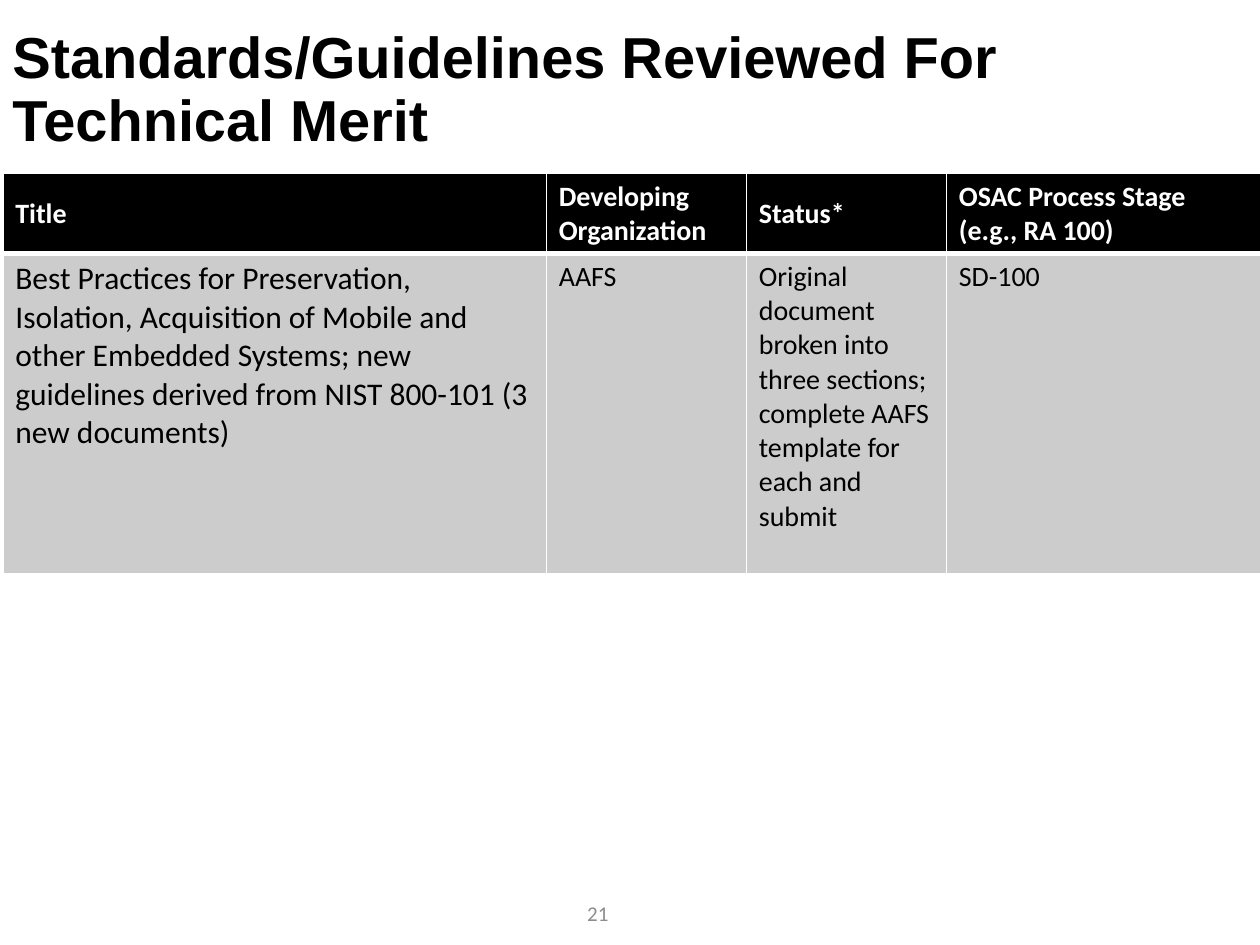
from pptx import Presentation
from pptx.dml.color import RGBColor
from pptx.enum.text import MSO_ANCHOR as Anchor, PP_ALIGN as Align
from pptx.oxml.ns import qn
from pptx.util import Pt
from lxml.etree import SubElement

BLACK = RGBColor(0x00, 0x00, 0x00)
WHITE = RGBColor(0xFF, 0xFF, 0xFF)
BODY_GRAY = RGBColor(0xCC, 0xCC, 0xCC)
NUMBER_GRAY = RGBColor(0x8C, 0x8C, 0x8C)

COLUMN_WIDTHS = [310.6, 114.3, 114.3, 179.4]
ROW_HEIGHTS = [45.6, 183]
HEADERS = ["Title", "Developing Organization", "Status*",
           "OSAC Process Stage (e.g., RA 100)"]
BODY = [
    "Best Practices for Preservation, Isolation, Acquisition of Mobile and "
    "other Embedded Systems; new guidelines derived from NIST 800-101 "
    "(3 new documents)",
    "AAFS",
    "Original document broken into three sections; complete AAFS template "
    "for each and submit",
    "SD-100",
]


def write_text(frame, text, color, alignment=Align.LEFT, line_spacing=1.0, **font_format):
    paragraph = frame.paragraphs[0]
    paragraph.alignment = alignment
    paragraph.line_spacing = line_spacing
    run = paragraph.add_run()
    run.text = text
    for name, value in font_format.items():
        setattr(run.font, name, value)
    run.font.color.rgb = color


def add_text(slide, box, text, color, **text_format):
    shape = slide.shapes.add_textbox(*map(Pt, box))
    frame = shape.text_frame
    frame.word_wrap = True
    frame.vertical_anchor = Anchor.MIDDLE
    write_text(frame, text, color, **text_format)


def set_borders(cell, widths):
    properties = cell._tc.get_or_add_tcPr()
    for side, width in widths.items():
        line = SubElement(properties, qn(f"a:ln{side}"), w=str(Pt(width)))
        fill = SubElement(line, qn("a:solidFill"))
        SubElement(fill, qn("a:srgbClr"), val=str(WHITE))


def fill_cell(cell, text, borders, background, anchor, color, **text_format):
    set_borders(cell, borders)
    cell.fill.solid()
    cell.fill.fore_color.rgb = background
    cell.vertical_anchor = anchor
    write_text(cell.text_frame, text, color, name="Calibri", **text_format)


def add_review_table(slide):
    frame = slide.shapes.add_table(
        len(ROW_HEIGHTS), len(COLUMN_WIDTHS), Pt(1.6), Pt(99.2),
        Pt(sum(COLUMN_WIDTHS)), Pt(sum(ROW_HEIGHTS)))
    table = frame.table
    for column, width in zip(table.columns, COLUMN_WIDTHS):
        column.width = Pt(width)
    for row, height in zip(table.rows, ROW_HEIGHTS):
        row.height = Pt(height)
    for index, (header, body) in enumerate(zip(HEADERS, BODY)):
        fill_cell(table.cell(0, index), header, {"L": 1, "R": 1, "T": 1, "B": 3},
                  BLACK, Anchor.MIDDLE, WHITE, size=Pt(16), bold=True)
        fill_cell(table.cell(1, index), body, {"L": 1, "R": 1, "T": 3, "B": 1},
                  BODY_GRAY, Anchor.TOP, BLACK,
                  size=Pt(16 if index else 18), bold=False)


def main():
    presentation = Presentation()
    presentation.slide_width = Pt(720)
    presentation.slide_height = Pt(540)
    slide = presentation.slides.add_slide(presentation.slide_layouts[6])
    add_text(slide, (0, 0, 620.6, 104.4),
             "Standards/Guidelines Reviewed For Technical Merit", BLACK,
             line_spacing=0.9, name="Arial", size=Pt(33), bold=True)
    add_review_table(slide)
    add_text(slide, (260.6, 507.6, 162, 28.8), "21", NUMBER_GRAY,
             alignment=Align.CENTER, name="Calibri", size=Pt(12))
    presentation.save("out.pptx")


if __name__ == "__main__":
    main()
